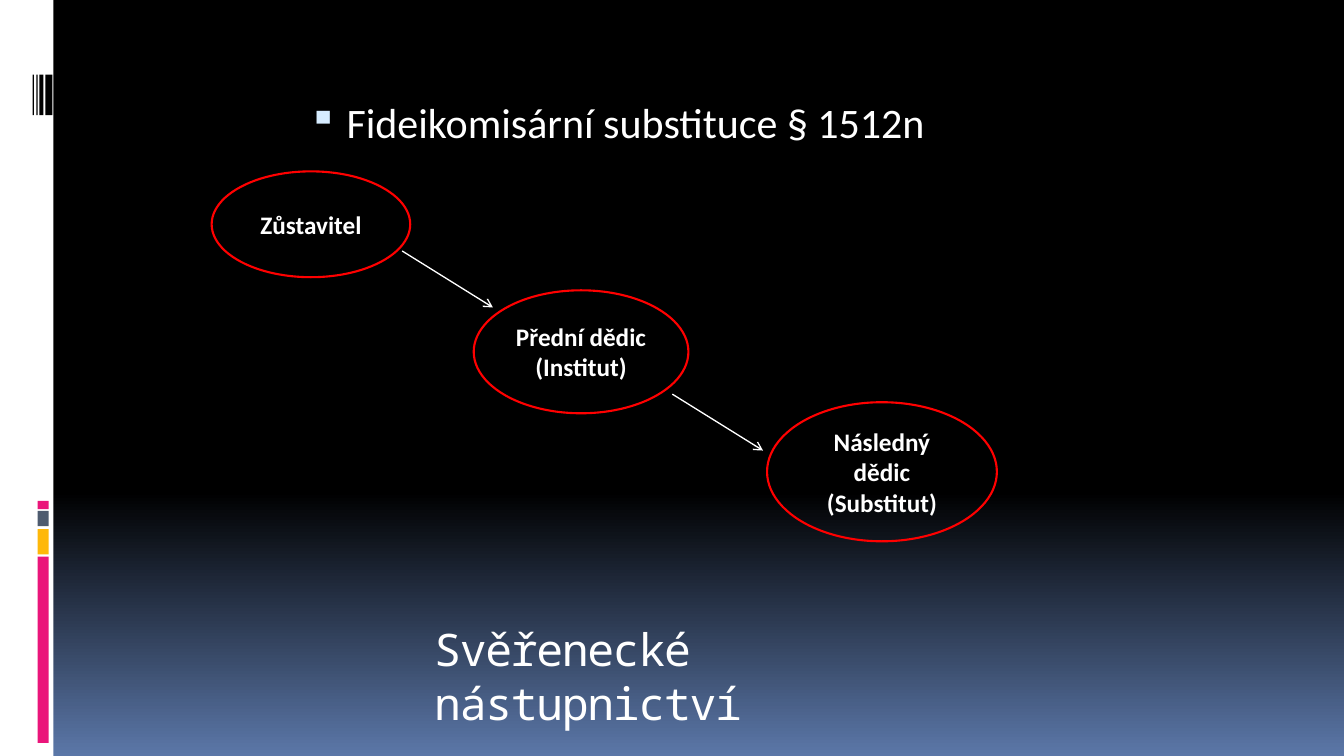
from copy import deepcopy

from lxml import etree
from pptx import Presentation
from pptx.dml.color import RGBColor
from pptx.enum import shapes, text
from pptx.oxml import ns
from pptx.util import Pt

WHITE = RGBColor(0xFF, 0xFF, 0xFF)
BLACK = RGBColor(0x00, 0x00, 0x00)
BLUE = RGBColor(0x5B, 0x77, 0xA8)
PINK = RGBColor(0xEA, 0x15, 0x7A)
AMBER = RGBColor(0xFE, 0xB8, 0x0A)
SLATE = RGBColor(0x4E, 0x5B, 0x6F)
RED = RGBColor(0xFF, 0x00, 0x00)

TITLE = "Svěřenecké nástupnictví"
TITLE_BOX = (303.12, 440.64, 419.76, 52.56)
TITLE_FONT = {"name": "Noto Sans Mono", "size": Pt(32)}

TOPIC = "Fideikomisární substituce § 1512n"
TOPIC_BOX = (208.08, 65.52, 504, 273.6)
TOPIC_FONT = {"name": "Calibri", "size": Pt(30)}

HEIRS = [
    ("Zůstavitel", (151.2, 122.4, 141.84, 75.6)),
    ("Přední dědic (Institut)", (338.4, 207.36, 153.36, 87.84)),
    ("Následný dědic (Substitut)", (547.92, 287.28, 164.16, 99.36)),
]
HEIR_FONT = {"name": "Calibri", "size": Pt(18), "bold": True}

ARROW_STARTS = [(287.28, 179.28), (480.24, 281.52)]
ARROW_RUN, ARROW_DROP = 64.8, 40.32

BACKDROP = [(0, BLACK), (0.65, BLACK), (1, BLUE)]
SIDEBAR = (0, 0, 38.2, 540)
STRIPE_LEFT, STRIPE_WIDTH = 26.8, 7.9
STRIPES = [(397.5, 133.1, PINK), (378, 18, AMBER), (365, 10.8, SLATE), (357.8, 5.8, PINK)]
BARCODE_TOP, BARCODE_HEIGHT = 53.4, 28.8
BARCODE = [(32.4, 5), (28.2, 2.9), (26, 0.9), (23.3, 0.9)]


def points(values):
    return [Pt(value) for value in values]


def write(frame, wording, font):
    frame.word_wrap = True
    para = frame.paragraphs[0]
    span = para.add_run()
    span.text = wording
    span.font.color.rgb = WHITE
    for name, value in font.items():
        setattr(span.font, name, value)
    return para, span


def add_block(page, place, color):
    block = page.shapes.add_shape(shapes.MSO_SHAPE.RECTANGLE, *points(place))
    block.shadow.inherit = False
    block.fill.solid()
    block.fill.fore_color.rgb = color
    block.line.fill.background()


def add_text(page, place, wording, font):
    box = page.shapes.add_textbox(*points(place))
    return write(box.text_frame, wording, font)


def add_heir(page, wording, place):
    oval = page.shapes.add_shape(shapes.MSO_SHAPE.OVAL, *points(place))
    oval.shadow.inherit = False
    oval.fill.background()
    oval.line.color.rgb = RED
    oval.line.width = Pt(1.5)
    oval.text_frame.vertical_anchor = text.MSO_ANCHOR.MIDDLE
    para, _ = write(oval.text_frame, wording, HEIR_FONT)
    para.alignment = text.PP_ALIGN.CENTER


def add_arrow(page, left, top):
    ends = points((left, top, left + ARROW_RUN, top + ARROW_DROP))
    arrow = page.shapes.add_connector(shapes.MSO_CONNECTOR.STRAIGHT, *ends)
    arrow.line.color.rgb = WHITE
    arrow.line.width = Pt(0.94)
    etree.SubElement(arrow.line._get_or_add_ln(), ns.qn("a:tailEnd"), type="arrow")
    etree.SubElement(arrow.element.spPr, ns.qn("a:effectLst"))


def add_bullet(para):
    props = para._p.get_or_add_pPr()
    props.set("marL", str(Pt(32.4)))
    props.set("indent", str(Pt(-27.36)))
    color = etree.SubElement(props, ns.qn("a:buClr"))
    etree.SubElement(color, ns.qn("a:srgbClr"), val="D6ECFF")
    etree.SubElement(props, ns.qn("a:buSzPct"), val="95000")
    etree.SubElement(props, ns.qn("a:buChar"), char="▪")


def paint_backdrop(page):
    fill = page.background.fill
    fill.gradient()
    fill.gradient_angle = 270
    stop_list = next(page.element.iter(ns.qn("a:gsLst")))
    stop_list.insert(1, deepcopy(stop_list[0]))
    for stop, (position, color) in zip(fill.gradient_stops, BACKDROP):
        stop.position = position
        stop.color.rgb = color


def main():
    deck = Presentation()
    deck.slide_width, deck.slide_height = Pt(960), Pt(540)
    page = deck.slides.add_slide(deck.slide_layouts[6])
    paint_backdrop(page)

    add_block(page, SIDEBAR, WHITE)
    for top, height, color in STRIPES:
        add_block(page, (STRIPE_LEFT, top, STRIPE_WIDTH, height), color)
    for left, width in BARCODE:
        add_block(page, (left, BARCODE_TOP, width, BARCODE_HEIGHT), BLACK)

    _, span = add_text(page, TITLE_BOX, TITLE, TITLE_FONT)
    span.font._element.set("spc", "-100")
    para, _ = add_text(page, TOPIC_BOX, TOPIC, TOPIC_FONT)
    para.space_before = Pt(7)
    add_bullet(para)

    for wording, place in HEIRS:
        add_heir(page, wording, place)
    for left, top in ARROW_STARTS:
        add_arrow(page, left, top)
    deck.save("out.pptx")


if __name__ == "__main__":
    main()
